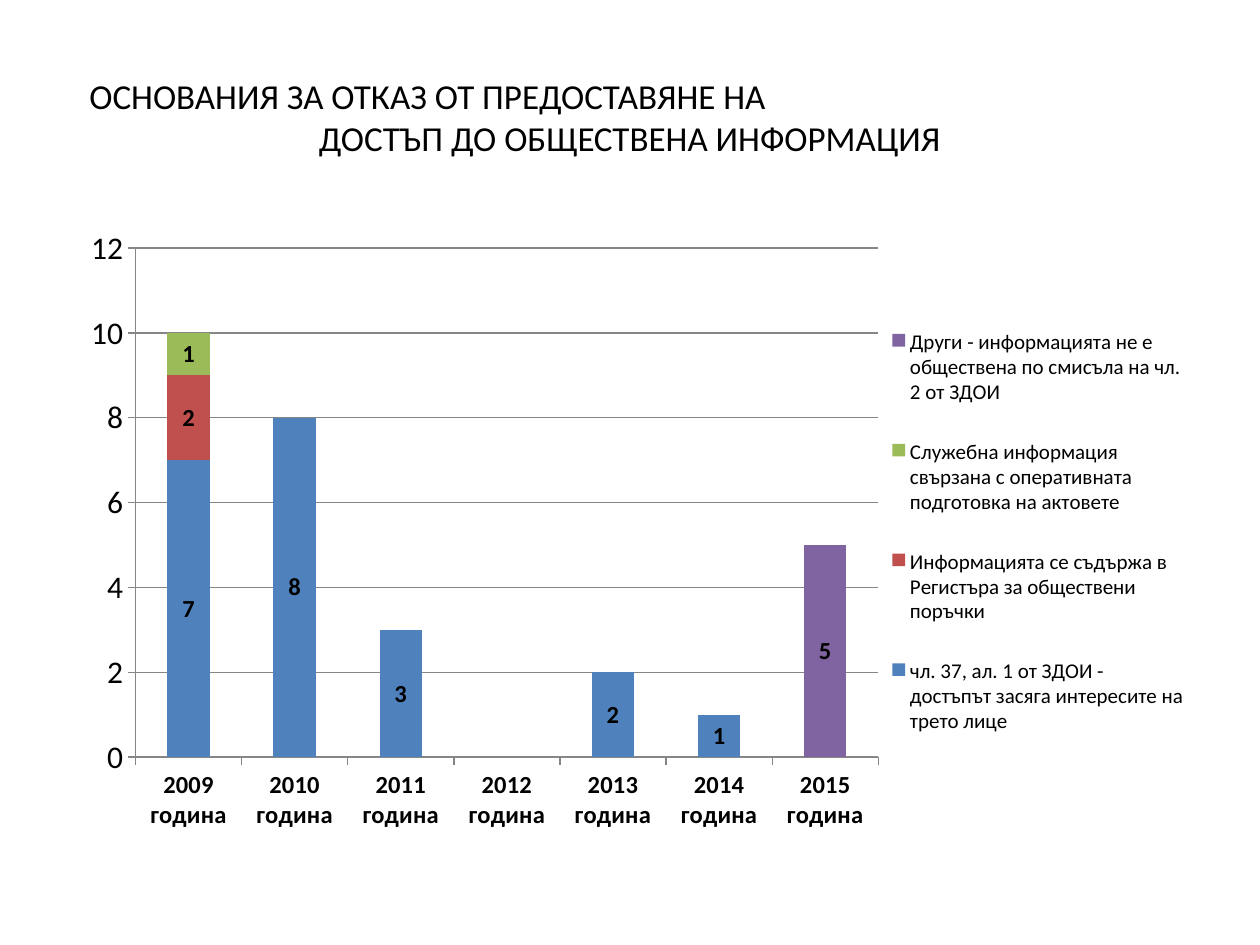
from dataclasses import dataclass

from lxml.etree import SubElement
from pptx import Presentation
from pptx.chart.data import CategoryChartData
from pptx.dml.color import RGBColor
from pptx.enum.chart import XL_CHART_TYPE, XL_LABEL_POSITION, XL_LEGEND_POSITION, XL_TICK_MARK
from pptx.enum.text import MSO_ANCHOR, PP_ALIGN
from pptx.oxml.ns import qn
from pptx.util import Pt

PX = 914400 / 126  # EMU per px


@dataclass(frozen=True)
class Theme:
    font: str = "Calibri"
    text: str = "000000"
    grid: str = "868686"
    series: tuple = ("4F81BD", "C0504D", "9BBB59", "8064A2")
    title: int = 20
    axis: int = 18
    label: int = 14
    legend: int = 12


THEME = Theme()

TITLE = [
    ("ОСНОВАНИЯ ЗА ОТКАЗ ОТ ПРЕДОСТАВЯНЕ НА", PP_ALIGN.LEFT),
    ("ДОСТЪП ДО ОБЩЕСТВЕНА ИНФОРМАЦИЯ", PP_ALIGN.CENTER),
]
YEARS = [f"{year} година" for year in range(2009, 2016)]
REASONS = {
    "чл. 37, ал. 1 от ЗДОИ - достъпът засяга интересите на трето лице":
        (7, 8, 3, None, 2, 1, None),
    "Информацията се съдържа в Регистъра за обществени поръчки":
        (2,) + (None,) * 6,
    "Служебна информация свързана с оперативната подготовка на актовете":
        (1,) + (None,) * 6,
    "Други - информацията не е обществена по смисъла на чл. 2 от ЗДОИ":
        (None,) * 6 + (5,),
}


def emu(*lengths):
    return [round(n * PX) for n in lengths]


def style(font, size, bold=False):
    font.name, font.size, font.bold = THEME.font, Pt(size), bold
    font.color.rgb = RGBColor.from_string(THEME.text)


def add_title(s, box):
    tf = s.shapes.add_textbox(*emu(*box)).text_frame
    tf.word_wrap = True
    tf.vertical_anchor = MSO_ANCHOR.MIDDLE
    for i, (text, align) in enumerate(TITLE):
        p = tf.add_paragraph() if i else tf.paragraphs[0]
        p.text, p.alignment = text, align
        style(p.font, THEME.title)
    # The first line is set in a little from the left
    tf.paragraphs[0]._p.get_or_add_pPr().set("marL", str(emu(14)[0]))


def set_layout(part, index, x, y, w, h, target=None):
    """Place a chart part by fractions of the chart's size."""
    for old in part.findall(qn("c:layout")):
        part.remove(old)
    layout = SubElement(part, qn("c:layout"))
    part.insert(index, layout)
    manual = SubElement(layout, qn("c:manualLayout"))
    settings = [("layoutTarget", target)] if target else []
    settings += [("xMode", "edge"), ("yMode", "edge"), ("x", x), ("y", y), ("w", w), ("h", h)]
    for tag, val in settings:
        SubElement(manual, qn(f"c:{tag}")).set("val", str(val))


def add_reasons_chart(s, box):
    data = CategoryChartData()
    data.categories = YEARS
    for name, values in REASONS.items():
        data.add_series(name, values)
    chart = s.shapes.add_chart(XL_CHART_TYPE.COLUMN_STACKED, *emu(*box), data).chart
    chart.has_title = False
    style(chart.font, THEME.axis)
    set_layout(chart._chartSpace.chart.plotArea, 0, 0.064, 0.045, 0.655, 0.816, "inner")

    # Columns and their values
    plot = chart.plots[0]
    plot.gap_width, plot.overlap = 150, 100
    plot.vary_by_categories = False
    for series, color in zip(plot.series, THEME.series):
        series.format.fill.solid()
        series.format.fill.fore_color.rgb = RGBColor.from_string(color)
        labels = series.data_labels
        labels.show_value = True
        labels.position = XL_LABEL_POSITION.CENTER
        style(labels.font, THEME.label, bold=True)

    # Axes and gridlines
    years, counts = chart.category_axis, chart.value_axis
    style(years.tick_labels.font, THEME.label, bold=True)
    style(counts.tick_labels.font, THEME.axis)
    counts.minimum_scale, counts.maximum_scale, counts.major_unit = 0, 12, 2
    counts.has_major_gridlines = True
    for axis in (years, counts):
        axis.major_tick_mark = XL_TICK_MARK.OUTSIDE
    for part in (years, counts, counts.major_gridlines):
        part.format.line.width = Pt(0.75)
        part.format.line.color.rgb = RGBColor.from_string(THEME.grid)

    # Legend
    chart.has_legend = True
    legend = chart.legend
    legend.position = XL_LEGEND_POSITION.RIGHT
    legend.include_in_layout = False
    style(legend.font, THEME.legend)
    set_layout(legend._element, 1, 0.74, 0.12, 0.26, 0.76)


def main():
    prs = Presentation()
    prs.slide_width, prs.slide_height = emu(1260, 945)
    s = prs.slides.add_slide(prs.slide_layouts[6])
    add_title(s, (63, 37, 1134, 158))
    add_reasons_chart(s, (63, 220, 1134, 624))
    prs.save("out.pptx")


if __name__ == "__main__":
    main()
